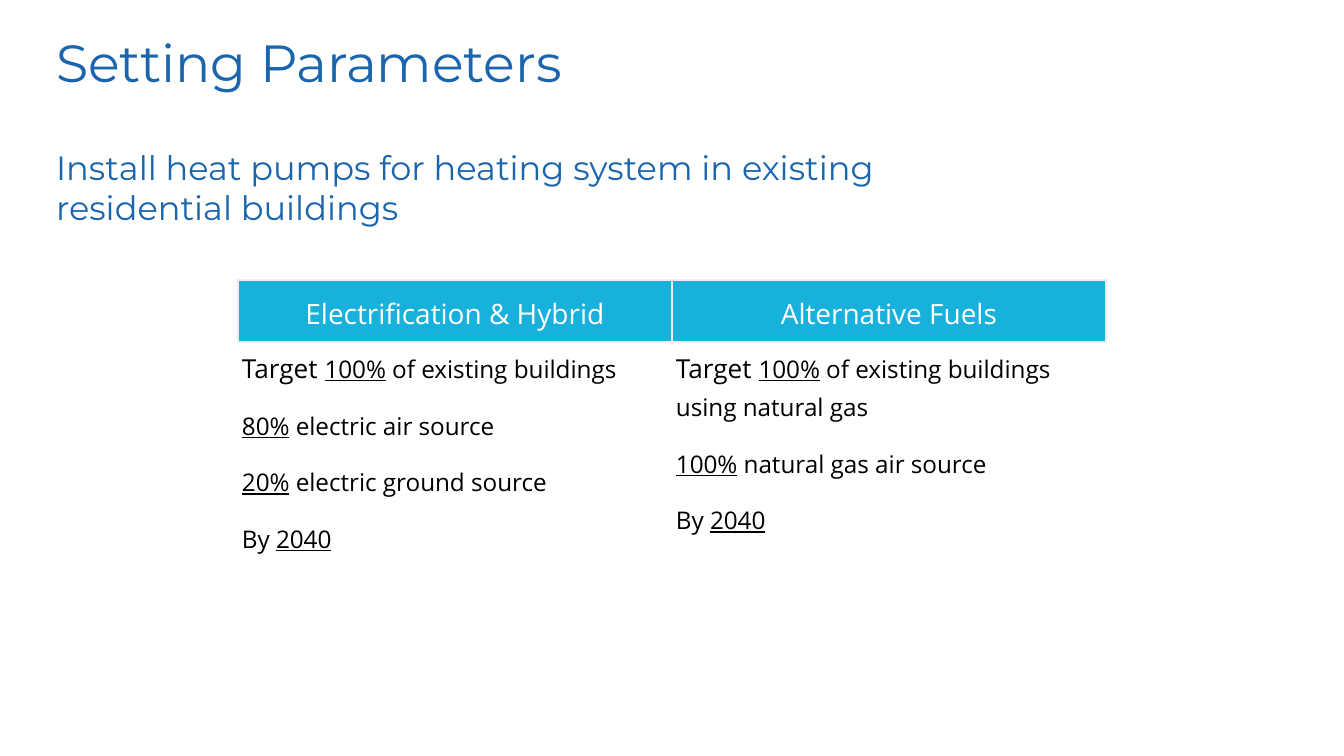
from dataclasses import dataclass

from lxml import etree
from pptx import Presentation
from pptx.dml.color import RGBColor
from pptx.enum.text import MSO_ANCHOR, PP_ALIGN
from pptx.oxml.ns import qn
from pptx.util import Emu, Pt

TOP, MIDDLE = MSO_ANCHOR.TOP, MSO_ANCHOR.MIDDLE
LEFT, CENTER = PP_ALIGN.LEFT, PP_ALIGN.CENTER

# Content: each line is a list of (text, size role, underlined)
TITLE = "Setting Parameters"
MEASURE = "Install heat pumps for heating system in existing residential buildings"
DEADLINE = [("By ", "body", False), ("2040", "body", True)]
SCENARIOS = [
    ("Electrification & Hybrid", [
        [("Target ", "lead", False), ("100%", "body", True),
         (" of existing buildings", "body", False)],
        [("80%", "body", True), (" electric air source", "body", False)],
        [("20%", "body", True), (" electric ground source", "body", False)],
        DEADLINE,
    ]),
    ("Alternative Fuels", [
        [("Target ", "lead", False), ("100%", "body", True),
         (" of existing buildings using natural gas", "body", False)],
        [("100%", "body", True), (" natural gas air source", "body", False)],
        DEADLINE,
    ]),
]

# Layout in px: left, top, width, height
SLIDE_SIZE = (1344, 756)
TITLE_BOX = (43, 17, 1228, 85)
MEASURE_BOX = (43, 134, 867, 67)
TABLE_BOX = (238, 280, 868, 340)
HEADER_HEIGHT = 62
TEXT_INSET = 13
CELL_INSETS = (4, 3)


@dataclass(frozen=True)
class Theme:
    heading_font: str = "Montserrat"
    table_font: str = "Open Sans"
    heading: str = "1B65AC"
    header_fill: str = "17B1DC"
    header_text: str = "FFFFFF"
    text: str = "000000"
    border: str = "EEEEEE"
    border_width: float = 0.75
    title_size: int = 28
    measure_size: int = 18
    header_size: int = 15
    lead_size: int = 14
    body_size: int = 13
    line_spacing: float = 1.15
    space_before: int = 10


THEME = Theme()
SIZES = {"header": THEME.header_size, "lead": THEME.lead_size, "body": THEME.body_size}


def px(length):
    return Emu(round(length * 914400 / 134.4))


def style_font(font, name, size, color):
    font.name, font.size, font.bold = name, Pt(size), False
    font.color.rgb = RGBColor.from_string(color)


def set_insets(target, horizontal, vertical):
    target.margin_left = target.margin_right = px(horizontal)
    target.margin_top = target.margin_bottom = px(vertical)


def write_heading(shape, box, text, size):
    shape.left, shape.top, shape.width, shape.height = map(px, box)
    frame = shape.text_frame
    frame.text = text
    frame.word_wrap = True
    frame.vertical_anchor = TOP
    set_insets(frame, TEXT_INSET, TEXT_INSET)
    paragraph = frame.paragraphs[0]
    paragraph.alignment = LEFT
    paragraph.line_spacing = 1.0
    style_font(paragraph.runs[0].font, THEME.heading_font, size, THEME.heading)


def set_borders(cell, visible_sides):
    properties = cell._tc.get_or_add_tcPr()
    for position, side in enumerate("LRTB"):
        line = etree.Element(qn(f"a:ln{side}"), w=str(Pt(THEME.border_width)))
        if side in visible_sides:
            fill = etree.SubElement(line, qn("a:solidFill"))
            etree.SubElement(fill, qn("a:srgbClr"), val=THEME.border)
        else:
            etree.SubElement(line, qn("a:noFill"))
        properties.insert(position, line)


def write_cell(cell, lines, color, alignment, anchor, space_before, borders):
    set_insets(cell, *CELL_INSETS)
    cell.vertical_anchor = anchor
    frame = cell.text_frame
    for index, line in enumerate(lines):
        paragraph = frame.add_paragraph() if index else frame.paragraphs[0]
        paragraph.alignment = alignment
        paragraph.line_spacing = THEME.line_spacing
        paragraph.space_before = Pt(space_before)
        for text, role, underlined in line:
            run = paragraph.add_run()
            run.text = text
            style_font(run.font, THEME.table_font, SIZES[role], color)
            run.font.underline = underlined
    set_borders(cell, borders)


def add_scenarios(slide):
    table = slide.shapes.add_table(2, len(SCENARIOS), *map(px, TABLE_BOX)).table
    table.horz_banding = False
    table.rows[0].height = px(HEADER_HEIGHT)
    table.rows[1].height = px(TABLE_BOX[3] - HEADER_HEIGHT)
    for column, (scenario, targets) in enumerate(SCENARIOS):
        table.columns[column].width = px(TABLE_BOX[2] / len(SCENARIOS))
        header, body = table.cell(0, column), table.cell(1, column)
        header.fill.solid()
        header.fill.fore_color.rgb = RGBColor.from_string(THEME.header_fill)
        body.fill.background()
        write_cell(header, [[(scenario, "header", False)]], THEME.header_text,
                   CENTER, MIDDLE, 0, "LRTB")
        write_cell(body, targets, THEME.text, LEFT, TOP, THEME.space_before, "T")


def main():
    deck = Presentation()
    deck.slide_width, deck.slide_height = map(px, SLIDE_SIZE)
    slide = deck.slides.add_slide(deck.slide_layouts.get_by_name("Title Only"))

    # Scenario table
    add_scenarios(slide)

    # Title and measure
    write_heading(slide.shapes.title, TITLE_BOX, TITLE, THEME.title_size)
    measure = slide.shapes.add_textbox(*map(px, MEASURE_BOX))
    write_heading(measure, MEASURE_BOX, MEASURE, THEME.measure_size)

    deck.save("out.pptx")


if __name__ == "__main__":
    main()
